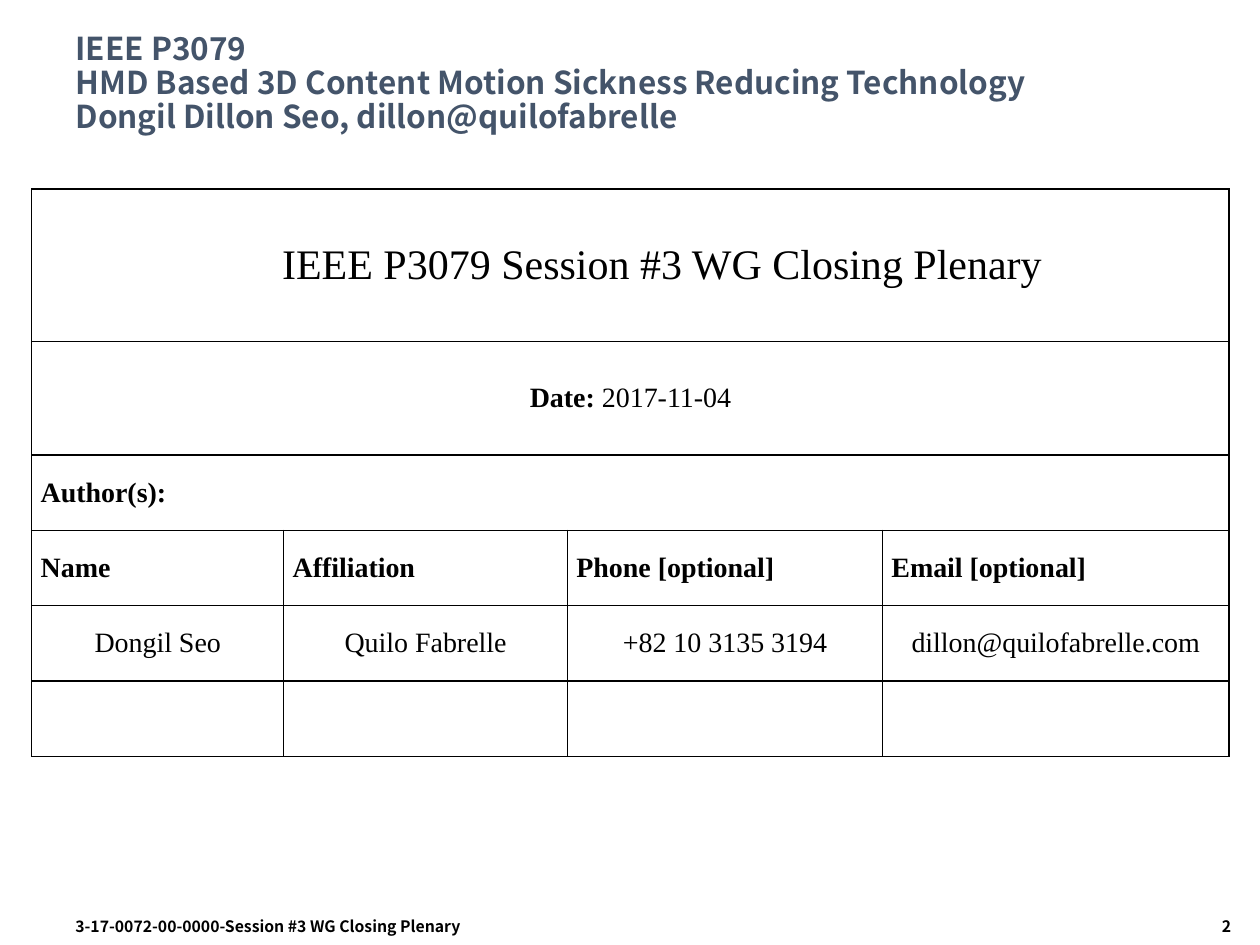
import lxml.etree
import pptx
import pptx.dml.color
import pptx.enum.text
import pptx.oxml.ns
import pptx.util

Cm = pptx.util.Cm
Pt = pptx.util.Pt
ALIGN = pptx.enum.text.PP_ALIGN
MIDDLE = pptx.enum.text.MSO_ANCHOR.MIDDLE
HEADING_FONT = "Noto Sans CJK KR"
TABLE_FONT = "Times New Roman"
FULL_WIDTH_ROWS = (0, 1, 2)
COLUMN_WIDTHS = (5.08, 5.72, 6.35, 6.99)
ROW_HEIGHTS = (3.07, 2.29, 1.52, 1.52, 1.52, 1.52)
HEADINGS = ("Name", "Affiliation", "Phone [optional]", "Email [optional]")
AUTHOR = ("Dongil Seo", "Quilo Fabrelle", "+82 10 3135 3194", "dillon@quilofabrelle.com")


def apply_format(target, values):
    """Set each named attribute of the target."""
    for name, value in values.items():
        setattr(target, name, value)


def set_color(color_format, hex_value):
    """Give a colour format the hex colour."""
    color_format.rgb = pptx.dml.color.RGBColor.from_string(hex_value)


def style_run(run, size, font, color="000000", bold=False):
    """Format one run of text."""
    apply_format(run.font, {"size": Pt(size), "name": font, "bold": bold})
    set_color(run.font.color, color)


def place(shape, box):
    """Move and size a shape to a box in centimetres."""
    apply_format(shape, dict(zip(("left", "top", "width", "height"), map(Cm, box))))


def add_heading(slide, box, lines):
    """Fill the title placeholder with the document heading."""
    heading = slide.shapes.title
    place(heading, box)
    frame = heading.text_frame
    frame.text = "\v".join(lines)
    apply_format(frame, {
        "vertical_anchor": MIDDLE,
        "word_wrap": True,
        "auto_size": pptx.enum.text.MSO_AUTO_SIZE.NONE,
    })
    paragraph = frame.paragraphs[0]
    apply_format(paragraph, {"alignment": ALIGN.LEFT, "line_spacing": 0.9})
    for run in paragraph.runs:
        style_run(run, 18, HEADING_FONT, "44546A", True)


def add_borders(cell, color="000000", width=1):
    """Draw a solid line on all four sides of a cell."""
    properties = cell._tc.get_or_add_tcPr()
    qn = pptx.oxml.ns.qn
    for index, side in enumerate(("lnL", "lnR", "lnT", "lnB")):
        line = lxml.etree.Element(qn(f"a:{side}"), w=str(Pt(width)))
        fill = lxml.etree.SubElement(line, qn("a:solidFill"))
        lxml.etree.SubElement(fill, qn("a:srgbClr"), val=color)
        properties.insert(index, line)


def write_cell(cell, parts, size=16, alignment=ALIGN.LEFT, space_after=0, indent=0):
    """Write (text, bold) parts into a cell."""
    paragraph = cell.text_frame.paragraphs[0]
    apply_format(paragraph, {"alignment": alignment, "space_after": Pt(space_after)})
    if indent:
        paragraph._p.get_or_add_pPr().set("marL", str(Cm(indent)))
    for text, bold in parts:
        run = paragraph.add_run()
        run.text = text
        style_run(run, size, TABLE_FONT, bold=bold)


def add_session_table(slide, box):
    """Build the table of session, date and authors."""
    frame = slide.shapes.add_table(len(ROW_HEIGHTS), len(COLUMN_WIDTHS), *map(Cm, box))
    table = frame.table
    apply_format(table, {"first_row": False, "horz_banding": False})
    for column, width in zip(table.columns, COLUMN_WIDTHS):
        column.width = Cm(width)
    for row, height in zip(table.rows, ROW_HEIGHTS):
        row.height = Cm(height)
    for cell in table.iter_cells():
        apply_format(cell, {
            "vertical_anchor": MIDDLE,
            "margin_left": Cm(0.18),
            "margin_right": Cm(0.18),
            "margin_top": 0,
            "margin_bottom": 0,
        })
        cell.fill.background()
        add_borders(cell)
    for row in FULL_WIDTH_ROWS:
        table.cell(row, 0).merge(table.cell(row, len(COLUMN_WIDTHS) - 1))

    session, date, authors = (table.cell(row, 0) for row in FULL_WIDTH_ROWS)
    write_cell(session, [("IEEE P3079 Session #3 WG Closing Plenary", False)],
               24, ALIGN.CENTER, 12, 1.27)
    write_cell(date, [("Date:", True), (" 2017-11-04", False)], 16, ALIGN.CENTER, 12)
    write_cell(authors, [("Author(s):", True)])
    for column, (heading, detail) in enumerate(zip(HEADINGS, AUTHOR)):
        write_cell(table.cell(3, column), [(heading, True)])
        write_cell(table.cell(4, column), [(detail, False)], alignment=ALIGN.CENTER)


def add_footer(slide, box, text, alignment):
    """Add one footer text in its box."""
    frame = slide.shapes.add_textbox(*map(Cm, box)).text_frame
    frame.word_wrap = True
    paragraph = frame.paragraphs[0]
    paragraph.alignment = alignment
    run = paragraph.add_run()
    run.text = text
    style_run(run, 9, HEADING_FONT, bold=True)


def main():
    """Build and save the presentation."""
    presentation = pptx.Presentation()
    apply_format(presentation, {"slide_width": Cm(25.4), "slide_height": Cm(19.05)})
    slide = presentation.slides.add_slide(presentation.slide_layouts[5])
    add_heading(slide, (1.27, 0.43, 22.86, 2.54), (
        "IEEE P3079",
        "HMD Based 3D Content Motion Sickness Reducing Technology",
        "Dongil Dillon Seo, dillon@quilofabrelle",
    ))
    add_session_table(slide, (0.64, 3.81, 24.14, 11.44))
    add_footer(slide, (1.27, 18.36, 11.23, 0.69),
               "3-17-0072-00-0000-Session #3 WG Closing Plenary", ALIGN.LEFT)
    add_footer(slide, (20.96, 18.36, 4.11, 0.69), "2", ALIGN.RIGHT)
    presentation.save("out.pptx")


if __name__ == "__main__":
    main()
